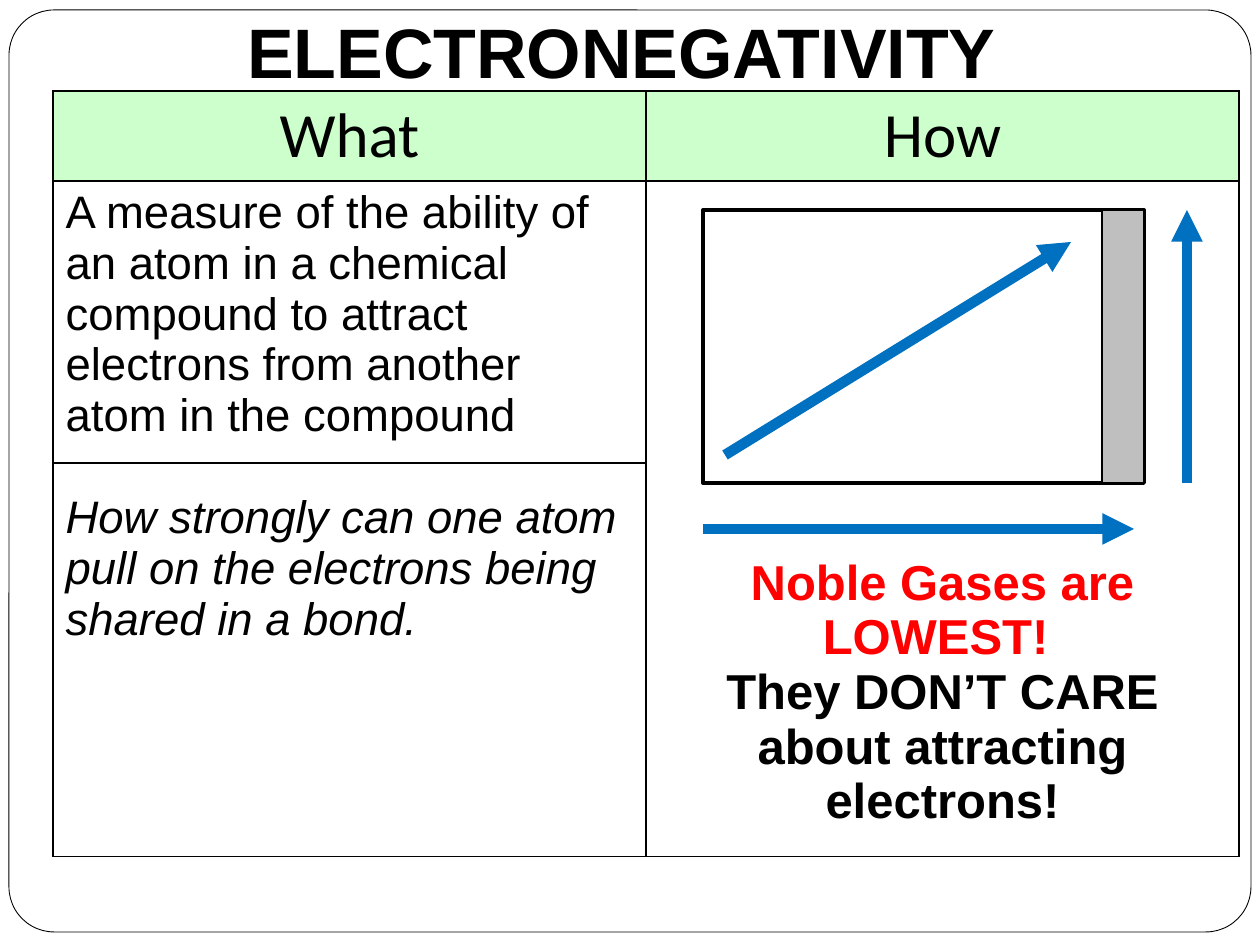
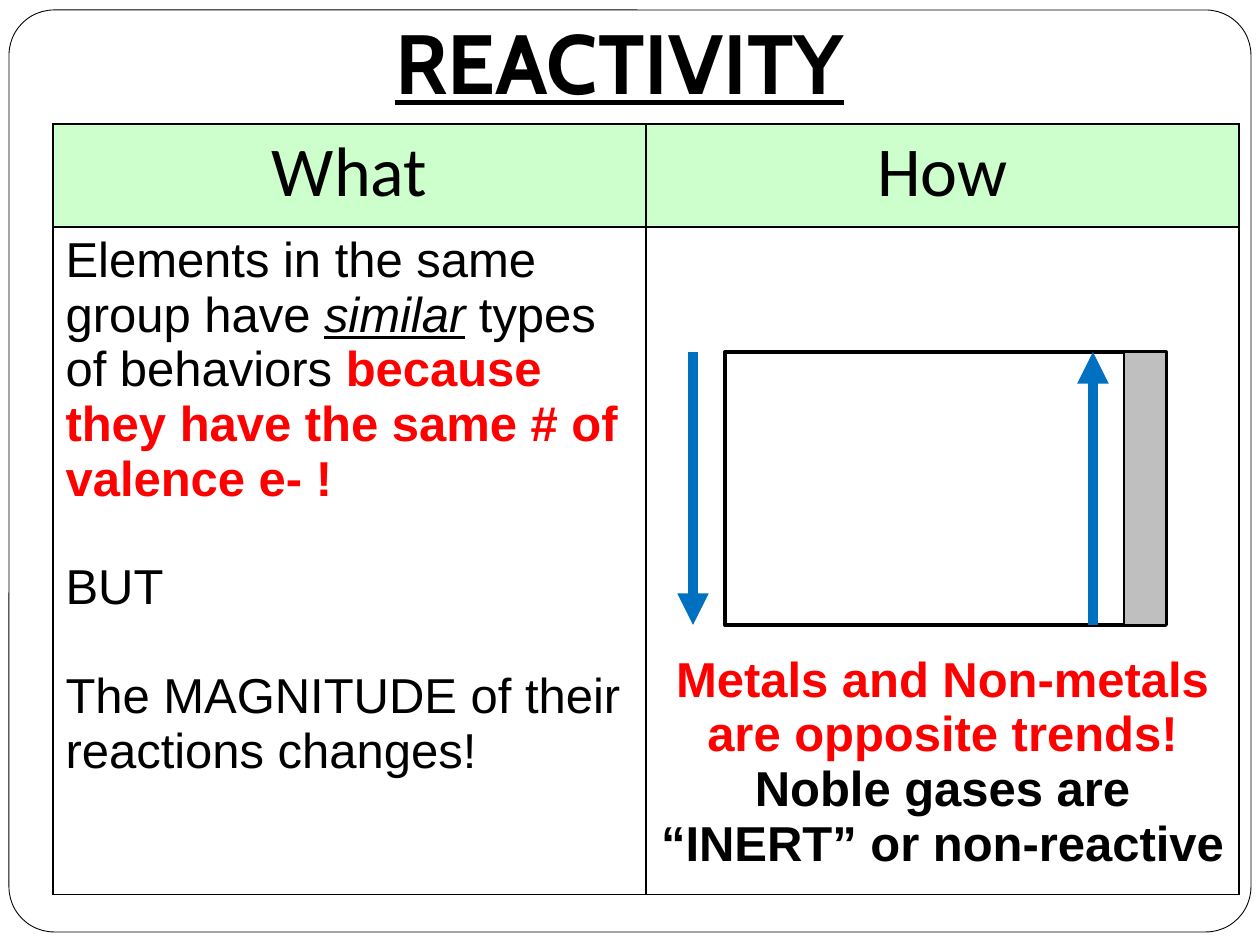
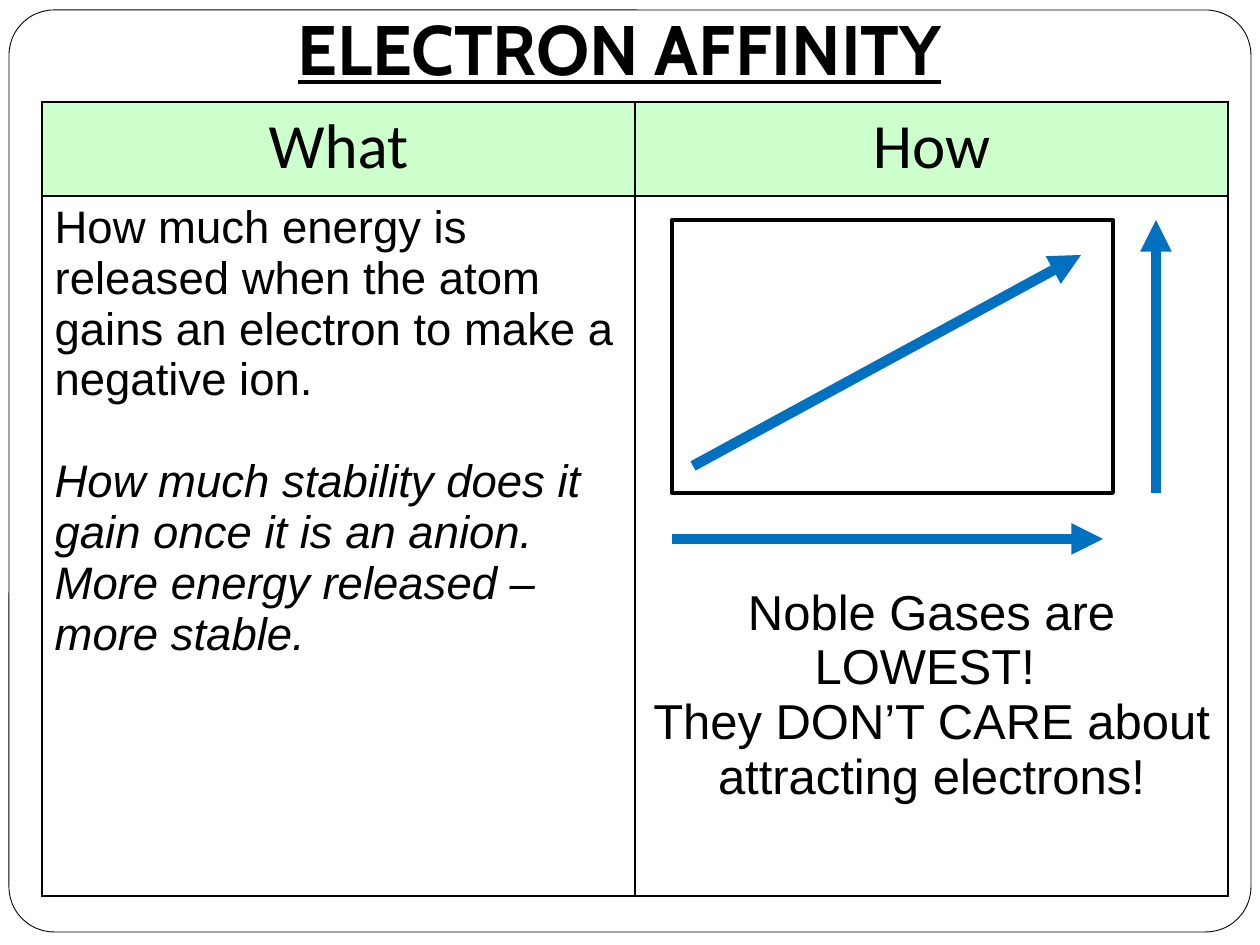
from lxml import etree
from pptx import Presentation
from pptx.dml.color import RGBColor
from pptx.enum.shapes import MSO_CONNECTOR, MSO_SHAPE
from pptx.enum.text import MSO_ANCHOR, PP_ALIGN
from pptx.oxml.ns import qn
from pptx.util import Emu, Pt

BLACK = RGBColor(0x00, 0x00, 0x00)
WHITE = RGBColor(0xFF, 0xFF, 0xFF)
GREEN = RGBColor(0xCC, 0xFF, 0xCC)
RED = RGBColor(0xFF, 0x00, 0x00)
BLUE = RGBColor(0x00, 0x70, 0xC0)
GRAY = RGBColor(0xBF, 0xBF, 0xBF)
LINE = MSO_CONNECTOR.STRAIGHT
RECT, ROUND = MSO_SHAPE.RECTANGLE, MSO_SHAPE.ROUNDED_RECTANGLE
CENTER, LEFT = PP_ALIGN.CENTER, PP_ALIGN.LEFT
BOTTOM = MSO_ANCHOR.BOTTOM

COL_W = 593            # width of each table column
CHART_W, CHART_H = 441, 273  # outline of the periodic table
NOBLE_W = 42           # noble gas strip at its right edge
LEADING = 1.117        # line height of Arial, in ems


def px(n):
    return Emu(round(n * 914400 / 126))


def add_box(slide, kind, left, top, width, height, fill, weight):
    box = slide.shapes.add_shape(kind, px(left), px(top), px(width), px(height))
    box.shadow.inherit = False
    if fill is None:
        box.fill.background()
    else:
        box.fill.solid()
        box.fill.fore_color.rgb = fill
    box.line.color.rgb = BLACK
    box.line.width = Pt(weight)
    return box


def add_line(slide, start, end, color, weight, head=False):
    x1, y1, x2, y2 = (px(n) for n in (*start, *end))
    line = slide.shapes.add_connector(LINE, x1, y1, x2, y2)
    line.line.color.rgb = color
    line.line.width = Pt(weight)
    props = line.element.spPr
    if head:
        etree.SubElement(props.find(qn("a:ln")), qn("a:tailEnd"), type="triangle")
    etree.SubElement(props, qn("a:effectLst"))


def set_font(font, size, name, **style):
    font.size = Pt(size)
    font.name = name
    font.color.rgb = BLACK
    font.bold = font.italic = False
    restyle(font, **style)


def restyle(font, color=None, **flags):
    if color is not None:
        font.color.rgb = color
    for flag, value in flags.items():
        setattr(font, flag, value)


def write(frame, paras, size, name="Arial", align=LEFT, gap=0):
    """Each paragraph is (runs, style); a run is (text, style) or a line break."""
    for i, (runs, style) in enumerate(paras):
        para = frame.add_paragraph() if i else frame.paragraphs[0]
        para.alignment = align
        para.space_before = Pt(gap if i else 0)
        set_font(para.font, size, name, **style)
        for text, own in runs:
            if text == "\n":
                para.add_line_break()
                continue
            run = para.add_run()
            run.text = text
            restyle(run.font, **own)


def plain(text, **style):
    return [(text, {})], style


def set_cell(cell, fill=None):
    props = cell._tc.get_or_add_tcPr()
    for side in ("lnL", "lnR", "lnT", "lnB"):
        edge = etree.SubElement(props, qn(f"a:{side}"), w=str(Pt(1)))
        paint = etree.SubElement(edge, qn("a:solidFill"))
        etree.SubElement(paint, qn("a:srgbClr"), val=str(BLACK))
    if fill is None:
        cell.fill.background()
    else:
        cell.fill.solid()
        cell.fill.fore_color.rgb = fill


def add_title(slide, left, top, text, size, name, **style):
    box = slide.shapes.add_textbox(px(left), px(top), px(1155), px(92))
    frame = box.text_frame
    frame.word_wrap = True
    frame.vertical_anchor = BOTTOM
    frame.margin_bottom = px(13)
    write(frame, [plain(text, bold=True, **style)], size, name, CENTER)


def add_grid(slide, left, top, rows, head, what, size, how, drop):
    """Table of What and How; the How text starts `drop` below its cell's top."""
    frame = slide.shapes.add_table(2, 2, px(left), px(top), px(2 * COL_W), px(sum(rows)))
    grid = frame.table
    grid.first_row = grid.horz_banding = False
    for col in grid.columns:
        col.width = px(COL_W)
    for row, height in zip(grid.rows, rows):
        row.height = px(height)

    # Header row
    for i, label in enumerate(("What", "How")):
        cell = grid.cell(0, i)
        set_cell(cell, GREEN)
        write(cell.text_frame, [plain(label)], head, "Calibri", CENTER)

    # Body row
    for i in range(2):
        set_cell(grid.cell(1, i))
    write(grid.cell(1, 0).text_frame, what, size, gap=round(size * LEADING))
    grid.cell(1, 1).margin_top = px(drop)
    write(grid.cell(1, 1).text_frame, how, 28, align=CENTER)


def add_trend(slide, left, top, arrows, noble=False):
    """Periodic table outline with arrows given relative to its corner."""
    add_box(slide, RECT, left, top, CHART_W, CHART_H, None, 2.25)
    for x1, y1, x2, y2 in arrows:
        add_line(slide, (left + x1, top + y1), (left + x2, top + y2), BLUE, 6, True)
    if noble:
        add_box(slide, RECT, left + CHART_W - NOBLE_W, top, NOBLE_W, CHART_H, GRAY, 1)


ACROSS = (0, 319, 431, 319)
UP = (484, CHART_H, 484, 0)


def start(deck):
    slide = deck.slides.add_slide(deck.slide_layouts[6])
    frame = add_box(slide, ROUND, 9, 10, 1242, 922, WHITE, 0.5)
    frame.adjustments[0] = 0.049
    return slide


def pull_slide(deck):
    slide = start(deck)
    add_title(slide, 44, 13, "ELECTRONEGATIVITY", 40, "Arial")
    what = [
        plain("A measure of the ability of an atom in a chemical compound "
              "to attract electrons from another atom in the compound"),
        plain("How strongly can one atom pull on the electrons being "
              "shared in a bond.", italic=True),
    ]
    how = [([("Noble Gases are LOWEST! ", {"color": RED}), ("\n", {}),
             ("They DON’T CARE about attracting electrons!", {})], {"bold": True})]
    add_grid(slide, 53, 91, (90, 655), 36, what, 26, how, 375)
    add_trend(slide, 703, 210, [ACROSS, UP, (22, 245, 368, 32)], noble=True)
    # Rule between the definition and its plain wording
    add_line(slide, (53, 463), (53 + COL_W, 463), BLACK, 0.75)


def react_slide(deck):
    slide = start(deck)
    add_title(slide, 42, 32, "REACTIVITY", 48, "Cabin", underline=True)
    what = [
        ([("Elements in the same group have ", {}),
          ("similar", {"italic": True, "underline": True}),
          (" types of behaviors ", {}),
          ("because they have the same # of valence e- !",
           {"color": RED, "bold": True})], {}),
        plain("BUT"),
        plain("The MAGNITUDE of their reactions changes!"),
    ]
    how = [
        plain("Metals and Non-metals are opposite trends!", color=RED, bold=True),
        plain("Noble gases are “INERT” or non-reactive", bold=True),
    ]
    add_grid(slide, 53, 124, (103, 665), 40, what, 28, how, 426)
    arrows = [(-32, 0, -32, CHART_H), (368, CHART_H, 368, 0)]
    add_trend(slide, 725, 352, arrows, noble=True)


def gain_slide(deck):
    slide = start(deck)
    add_title(slide, 42, 10, "ELECTRON AFFINITY", 40, "Cabin", underline=True)
    what = [
        plain("How much energy is released when the atom gains an electron "
              "to make a negative ion."),
        plain("How much stability does it gain once it is an anion. "
              "More energy released – more stable.", italic=True),
    ]
    how = [([("Noble Gases are LOWEST! ", {}), ("\n", {}),
             ("They DON’T CARE about attracting electrons!", {})], {})]
    add_grid(slide, 42, 102, (94, 700), 36, what, 26, how, 390)
    add_trend(slide, 672, 220, [ACROSS, UP, (21, 246, 409, 35)])


def main():
    deck = Presentation()
    deck.slide_width, deck.slide_height = px(1260), px(945)
    for build in (pull_slide, react_slide, gain_slide):
        build(deck)
    deck.save("out.pptx")


if __name__ == "__main__":
    main()
